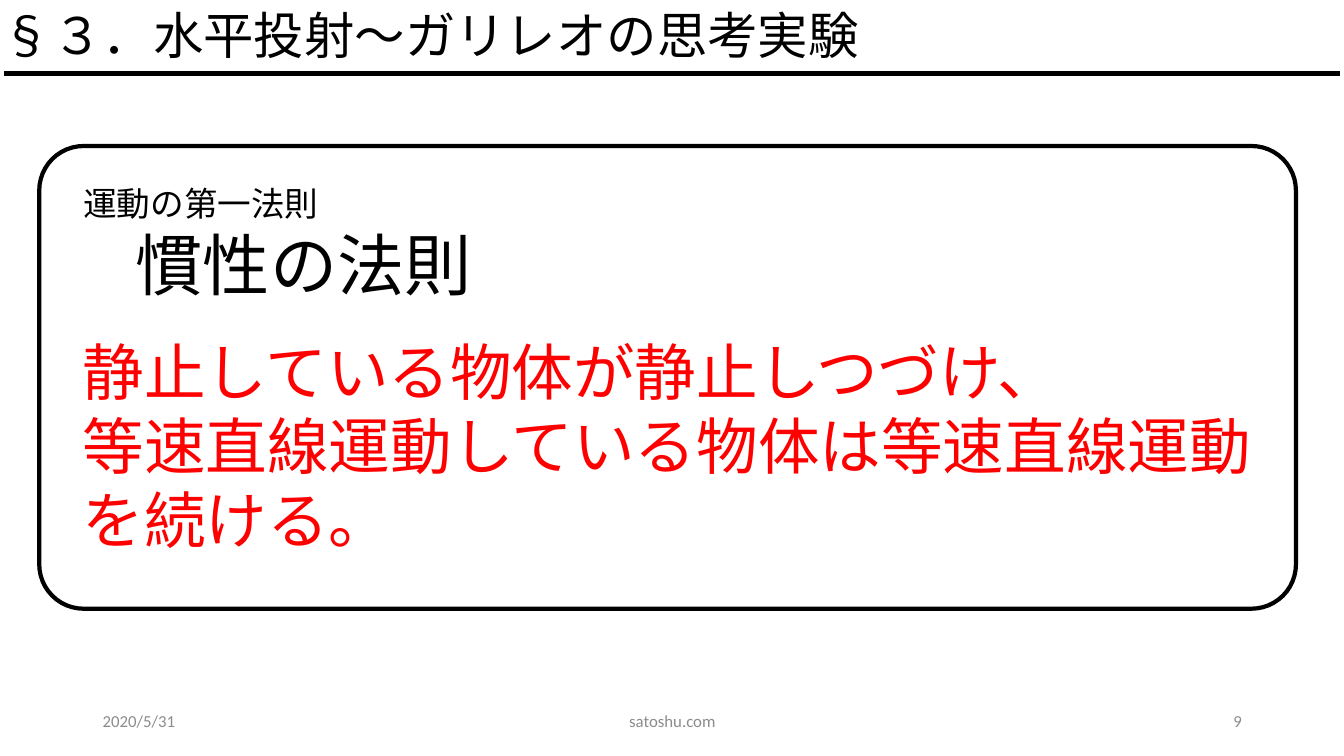
from lxml import etree
from pptx import Presentation
from pptx import util as u
from pptx.dml.color import RGBColor
from pptx.enum import shapes, text
from pptx.oxml import ns

COLORS = {"ink": "000000", "law": "FF0000", "footer": "8C8C8C", "paper": "FFFFFF"}
JAPANESE = "Noto Sans CJK JP"
LEFT, CENTER, RIGHT = text.PP_ALIGN.LEFT, text.PP_ALIGN.CENTER, text.PP_ALIGN.RIGHT
TOP, MIDDLE = text.MSO_ANCHOR.TOP, text.MSO_ANCHOR.MIDDLE


def write(box, lines, color, font="Calibri", anchor=TOP, margins=(0.25, 0.13)):
    """Fill a box with (wording, size, alignment) paragraphs."""
    frame = box.text_frame
    side, edge = (u.Cm(margin) for margin in margins)
    layout = {"word_wrap": True, "auto_size": text.MSO_AUTO_SIZE.NONE,
              "vertical_anchor": anchor, "margin_left": side, "margin_right": side,
              "margin_top": edge, "margin_bottom": edge}
    for name, value in layout.items():
        setattr(frame, name, value)
    for index, (wording, size, alignment) in enumerate(lines):
        para = frame.add_paragraph() if index else frame.paragraphs[0]
        para.alignment = alignment
        span = para.add_run()
        span.text = wording
        span.font.name = font
        span.font.size = u.Pt(size)
        span.font.color.rgb = RGBColor.from_string(COLORS[color])
        east_asian = etree.SubElement(span.font._element, ns.qn("a:ea"))
        east_asian.set("typeface", JAPANESE)


def outline(item):
    item.line.color.rgb = RGBColor.from_string(COLORS["ink"])
    item.line.width = u.Pt(3)


deck = Presentation()
deck.slide_width, deck.slide_height = u.Cm(33.87), u.Cm(19.05)
page = deck.slides.add_slide(deck.slide_layouts.get_by_name("Title Only"))

# Heading and its rule
rule = page.shapes.add_connector(
    shapes.MSO_CONNECTOR.STRAIGHT, u.Cm(0.1), u.Cm(1.85), u.Cm(33.76), u.Cm(1.85))
outline(rule)
etree.SubElement(rule._element.spPr, ns.qn("a:effectLst"))

title = page.shapes.title
title_place = {"left": -0.13, "top": 0, "width": 33.93, "height": 2.39}
for name, value in title_place.items():
    setattr(title, name, u.Cm(value))
write(title, [("§３．水平投射～ガリレオの思考実験", 36, LEFT)], "ink",
      font=JAPANESE, margins=(0.18, 0.1))

# Footer row
footers = [("2020/5/31", 2.34, 7.62, LEFT),
           ("satoshu.com", 11.23, 11.43, CENTER),
           ("9", 23.93, 7.62, RIGHT)]
for wording, left, width, alignment in footers:
    footer = page.shapes.add_textbox(u.Cm(left), u.Cm(17.65), u.Cm(width), u.Cm(1.02))
    write(footer, [(wording, 12, alignment)], "footer", anchor=MIDDLE)

# Framed law
law_frame = page.shapes.add_shape(
    shapes.MSO_SHAPE.ROUNDED_RECTANGLE, u.Cm(0.99), u.Cm(3.68), u.Cm(31.67), u.Cm(11.66))
law_frame.adjustments[0] = 0.096
law_frame.shadow.inherit = False
law_frame.fill.background()
outline(law_frame)

law_name = page.shapes.add_textbox(u.Cm(1.85), u.Cm(4.47), u.Cm(11.61), u.Cm(3.33))
law_name.fill.solid()
law_name.fill.fore_color.rgb = RGBColor.from_string(COLORS["paper"])
write(law_name, [("運動の第一法則", 24, LEFT), ("慣性の法則", 48, CENTER)], "ink")

statement = page.shapes.add_textbox(u.Cm(1.83), u.Cm(8.28), u.Cm(31.04), u.Cm(5.89))
write(statement, [("静止している物体が静止しつづけ、", 44, LEFT),
                  ("等速直線運動している物体は等速直線運動を続ける。", 44, LEFT)], "law")

deck.save("out.pptx")
